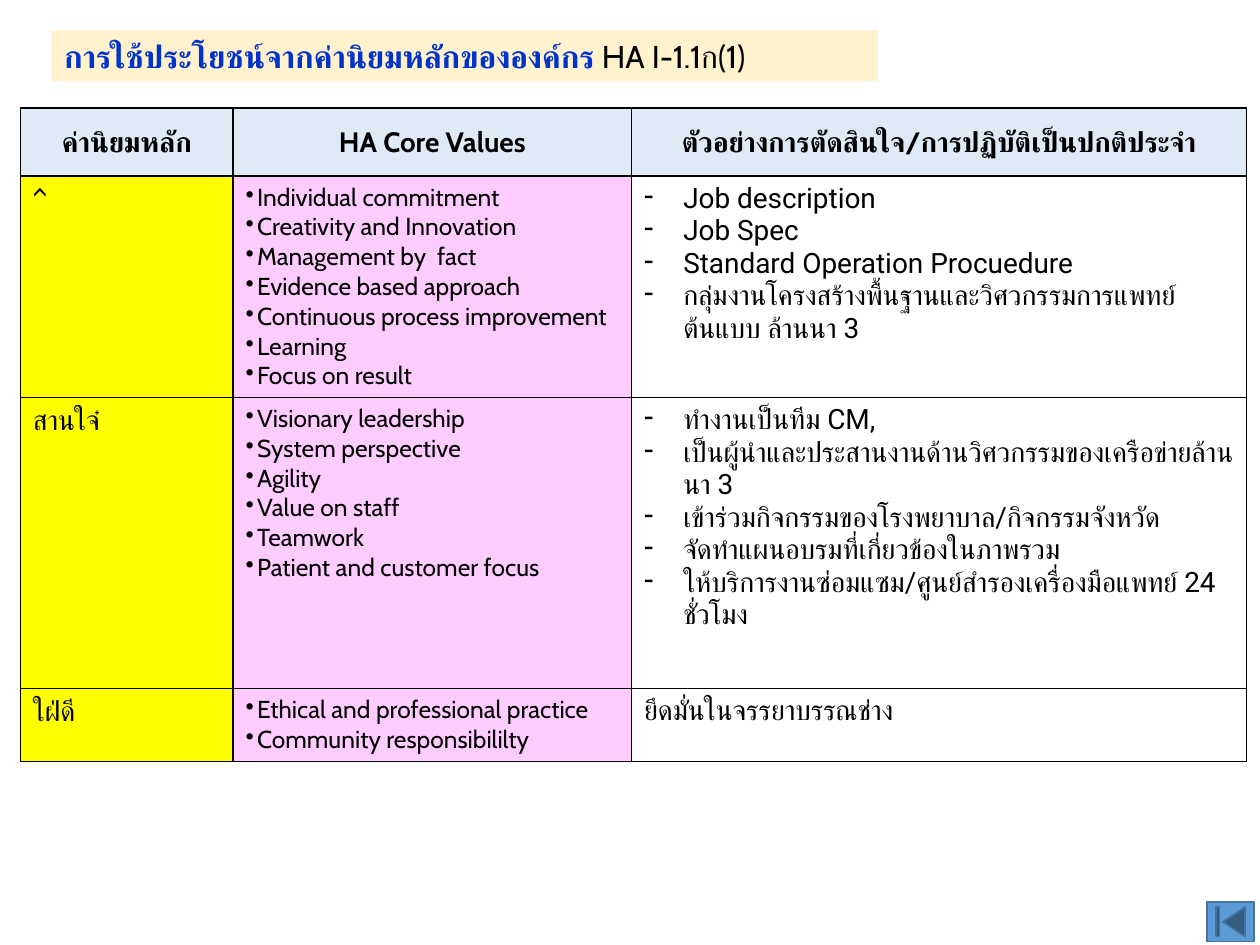
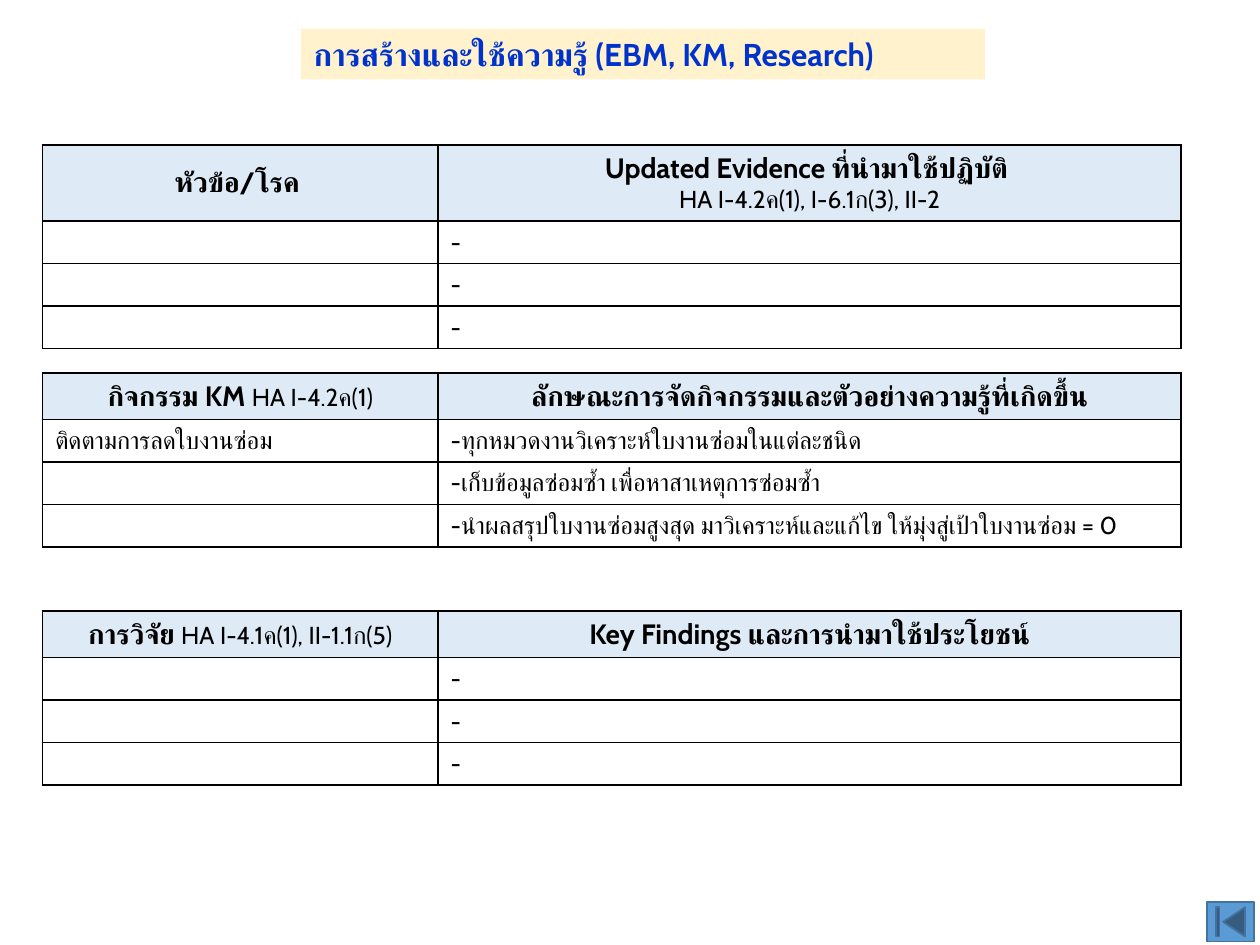
"""Build two slides on core values and on knowledge use, with tables in one shared style."""
from lxml.etree import SubElement
from pptx import Presentation
from pptx.dml.color import RGBColor
from pptx.enum.shapes import MSO_SHAPE
from pptx.enum.text import MSO_ANCHOR, MSO_AUTO_SIZE, PP_ALIGN
from pptx.oxml import parse_xml
from pptx.oxml.ns import nsdecls, qn
from pptx.util import Cm, Pt

BLACK, BLUE, CREAM, HEADER = "000000", "0033CC", "FFF2CC", "DEEBF7"
YELLOW, PINK, BUTTON, BUTTON_LINE = "FFFF00", "FFCCFF", "5B9BD5", "43739E"

BASE = {"name": "Cabin", "size": Pt(16), "bold": False, "color": BLACK}
BOLD = BASE | {"bold": True}
SMALL = BASE | {"size": Pt(14)}
TITLE = BOLD | {"size": Pt(18), "color": BLUE}
ROBOTO = BASE | {"name": "Roboto"}

VALUE_COLUMNS = [
    {"fmt": BASE, "fill": YELLOW},
    {"fmt": SMALL, "fill": PINK, "bullet": ("•", Cm(0.23))},
    {"fmt": ROBOTO, "bullet": ("-", Cm(0.79))},
]
KNOWLEDGE_COLUMNS = [{"fmt": SMALL}, {"fmt": SMALL}]

VALUE_HEADS = ["ค่านิยมหลัก", "HA Core Values", "ตัวอย่างการตัดสินใจ/การปฏิบัติเป็นปกติประจำ"]
VALUE_ROWS = [
    ["^",
     ["Individual commitment", "Creativity and Innovation", "Management by  fact",
      "Evidence based approach", "Continuous process improvement", "Learning",
      "Focus on result"],
     ["Job description", "Job Spec", "Standard Operation Procuedure",
      "กลุ่มงานโครงสร้างพื้นฐานและวิศวกรรมการแพทย์ต้นแบบ ล้านนา 3"]],
    ["สานใจ๋",
     ["Visionary leadership", "System perspective", "Agility", "Value on staff",
      "Teamwork", "Patient and customer focus"],
     ["ทำงานเป็นทีม CM,",
      "เป็นผู้นำและประสานงานด้านวิศวกรรมของเครือข่ายล้านนา 3",
      "เข้าร่วมกิจกรรมของโรงพยาบาล/กิจกรรมจังหวัด",
      "จัดทำแผนอบรมที่เกี่ยวข้องในภาพรวม",
      "ให้บริการงานซ่อมแซม/ศูนย์สำรองเครื่องมือแพทย์ 24 ชั่วโมง"]],
    ["ใฝ่ดี",
     ["Ethical and professional practice", "Community responsibililty"],
     "ยึดมั่นในจรรยาบรรณช่าง"],
]

DASH_ROWS = [["", "-"]] * 3
KM_ROWS = [
    ["ติดตามการลดใบงานซ่อม", "-ทุกหมวดงานวิเคราะห์ใบงานซ่อมในแต่ละชนิด"],
    ["", "-เก็บข้อมูลซ่อมซ้ำ เพื่อหาสาเหตุการซ่อมซ้ำ"],
    ["", "-นำผลสรุปใบงานซ่อมสูงสุด มาวิเคราะห์และแก้ไข ให้มุ่งสู่เป้าใบงานซ่อม = 0"],
]
KNOWLEDGE_TABLES = [
    (2.92, 1.53, DASH_ROWS,
     ["หัวข้อ/โรค ",
      ["Updated Evidence ที่นำมาใช้ปฏิบัติ ", [("HA I-4.2ค(1), I-6.1ก(3), II-2", SMALL)]]]),
    (7.52, 0.93, KM_ROWS,
     [[[("กิจกรรม KM ", BOLD), ("HA I-4.2ค(1)", SMALL)]],
      "ลักษณะการจัดกิจกรรมและตัวอย่างความรู้ที่เกิดขึ้น"]),
    (12.32, 0.93, DASH_ROWS,
     [[[("การวิจัย ", BOLD), ("HA I-4.1ค(1), II-1.1ก(5)", SMALL)]],
      "Key Findings และการนำมาใช้ประโยชน์"]),
]


def rgb(value):
    """Return the colour for a hex string."""
    return RGBColor.from_string(value)


def set_attrs(obj, values):
    """Set each named attribute on an object."""
    for name, value in values.items():
        setattr(obj, name, value)


def paint(obj, color):
    """Give a shape or cell a solid fill, or none."""
    if color:
        obj.fill.solid()
        obj.fill.fore_color.rgb = rgb(color)
    else:
        obj.fill.background()


def add_run(p, text, fmt):
    """Add a formatted run whose font also serves Thai text."""
    r = p.add_run()
    r.text = text
    set_attrs(r.font, {k: v for k, v in fmt.items() if k != "color"})
    r.font.color.rgb = rgb(fmt["color"])
    SubElement(r.font._element, qn("a:cs"), typeface=fmt["name"])


def set_bullet(p, char, indent):
    """Hang a paragraph from a bullet character."""
    pPr = p._p.get_or_add_pPr()
    pPr.set("marL", str(indent))
    pPr.set("indent", str(-indent))
    SubElement(pPr, qn("a:buChar"), char=char)


def write(tf, content, fmt, align=PP_ALIGN.LEFT, bullet=None):
    """Write a string, or a list of lines that are strings or lists of runs."""
    lines = content if isinstance(content, list) else [content]
    for i, line in enumerate(lines):
        p = tf.add_paragraph() if i else tf.paragraphs[0]
        p.alignment = align
        if bullet and isinstance(content, list):
            set_bullet(p, *bullet)
        if not line:
            SubElement(p._p, qn("a:endParaRPr"), sz=str(int(fmt["size"].pt * 100)))
            continue
        for text, run_fmt in [(line, fmt)] if isinstance(line, str) else line:
            add_run(p, text, run_fmt)


def set_borders(cell):
    """Draw a thin black line on all four sides of a cell."""
    tcPr = cell._tc.get_or_add_tcPr()
    for i, side in enumerate("LRTB"):
        tcPr.insert(i, parse_xml(
            f'<a:ln{side} {nsdecls("a")} w="{Pt(1)}"><a:solidFill>'
            f'<a:srgbClr val="{BLACK}"/></a:solidFill></a:ln{side}>'))


def add_grid(s, left, top, widths, heights, heads, rows, columns):
    """Add a table with a header row and one style per body column."""
    frame = s.shapes.add_table(len(heights), len(widths), Cm(left), Cm(top),
                               Cm(sum(widths)), Cm(sum(heights)))
    table = frame.table
    set_attrs(table, {"first_row": False, "horz_banding": False})
    for column, width in zip(table.columns, widths):
        column.width = Cm(width)
    for row, height in zip(table.rows, heights):
        row.height = Cm(height)
    for i, contents in enumerate([heads] + rows):
        for j, (content, style) in enumerate(zip(contents, columns)):
            cell = table.cell(i, j)
            if i == 0:
                cell.vertical_anchor = MSO_ANCHOR.MIDDLE
                paint(cell, HEADER)
                write(cell.text_frame, content, BOLD, PP_ALIGN.CENTER)
            else:
                paint(cell, style.get("fill"))
                write(cell.text_frame, content, style["fmt"], bullet=style.get("bullet"))
            set_borders(cell)


def add_home_button(s):
    """Add the button in the bottom right corner."""
    sp = s.shapes.add_shape(MSO_SHAPE.ACTION_BUTTON_BEGINNING,
                            Cm(24.33), Cm(18.19), Cm(0.95), Cm(0.79))
    sp.shadow.inherit = False
    paint(sp, BUTTON)
    sp.line.color.rgb = rgb(BUTTON_LINE)
    sp.line.width = Pt(1)


def add_slide(prs, title, left, top, width):
    """Add a slide with its title band and corner button."""
    s = prs.slides.add_slide(prs.slide_layouts[5])
    sp = s.shapes.title
    set_attrs(sp, {"left": Cm(left), "top": Cm(top), "width": Cm(width), "height": Cm(1.02)})
    paint(sp, CREAM)
    set_attrs(sp.text_frame, {"word_wrap": True, "auto_size": MSO_AUTO_SIZE.NONE,
                              "vertical_anchor": MSO_ANCHOR.MIDDLE})
    write(sp.text_frame, title, TITLE)
    add_home_button(s)
    return s


def main():
    """Build and save the presentation."""
    prs = Presentation()
    set_attrs(prs, {"slide_width": Cm(25.4), "slide_height": Cm(19.05)})

    title = [[("การใช้ประโยชน์จากค่านิยมหลักขององค์กร", TITLE),
              (" HA I-1.1ก(1)", TITLE | {"color": BLACK, "bold": False})]]
    s = add_slide(prs, title, 1.04, 0.61, 16.66)
    add_grid(s, 0.41, 2.18, [4.29, 8.03, 12.4], [1.37, 4.45, 5.87, 1.47],
             VALUE_HEADS, VALUE_ROWS, VALUE_COLUMNS)

    s = add_slide(prs, "การสร้างและใช้ความรู้ (EBM, KM, Research)", 6.07, 0.58, 13.79)
    for top, head_height, rows, heads in KNOWLEDGE_TABLES:
        add_grid(s, 0.86, top, [7.97, 14.98], [head_height] + [0.85] * len(rows),
                 heads, rows, KNOWLEDGE_COLUMNS)

    prs.save("out.pptx")


if __name__ == "__main__":
    main()
